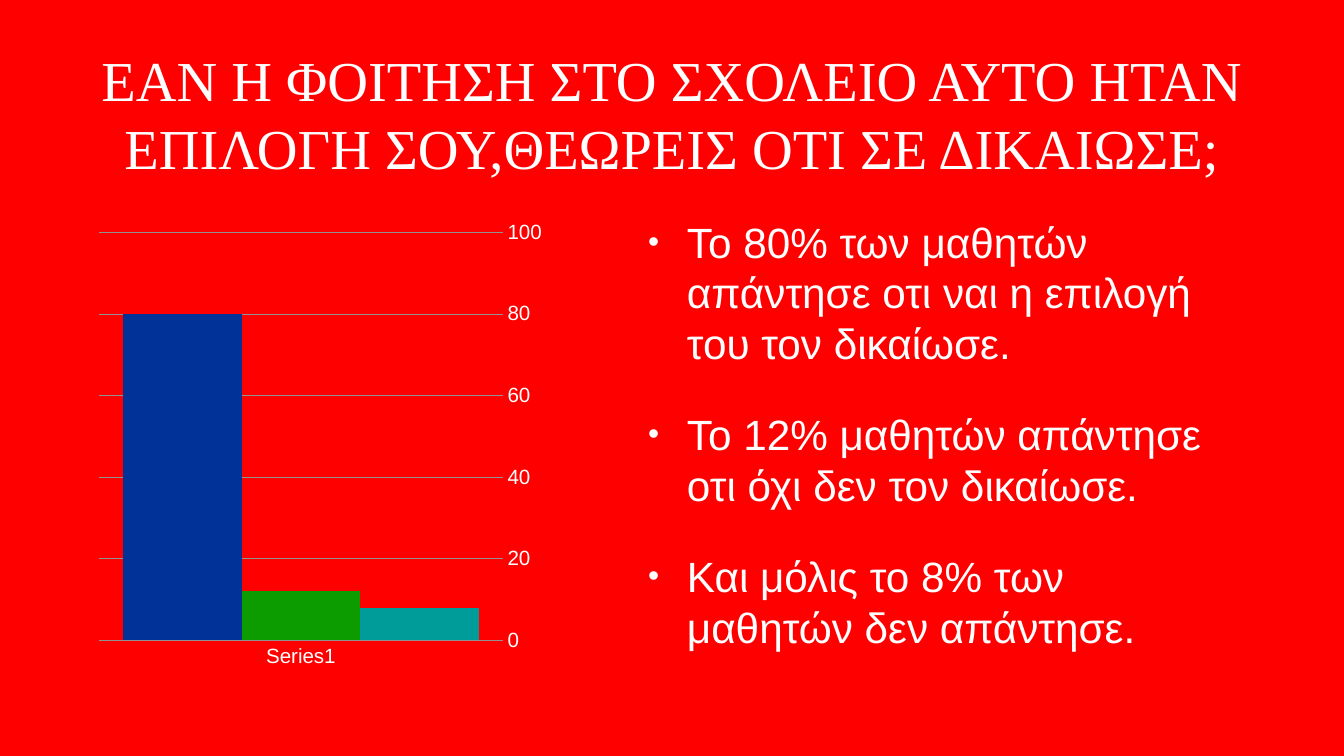
from lxml.etree import SubElement
from pptx import Presentation
from pptx.chart.data import CategoryChartData
from pptx.dml.color import RGBColor
from pptx.enum.chart import XL_CHART_TYPE, XL_TICK_LABEL_POSITION, XL_TICK_MARK
from pptx.enum.text import MSO_ANCHOR, MSO_AUTO_SIZE, PP_ALIGN
from pptx.oxml import parse_xml
from pptx.oxml.ns import nsdecls, qn
from pptx.util import Emu, Pt

PX = 914400 / 50.4
THEME = {
    "background": RGBColor.from_string("FF0000"),
    "text": RGBColor.from_string("FFFFFF"),
    "grid": RGBColor.from_string("929292"),
    "title": {"name": "Times New Roman", "size": Pt(80.6)},
    "body": {"name": "Arial", "size": Pt(60.4)},
    "axis": {"name": "Arial", "size": Pt(29.4)},
}
QUESTION = "ΕΑΝ Η ΦΟΙΤΗΣΗ ΣΤΟ ΣΧΟΛΕΙΟ ΑΥΤΟ ΗΤΑΝ ΕΠΙΛΟΓΗ ΣΟΥ,ΘΕΩΡΕΙΣ ΟΤΙ ΣΕ ΔΙΚΑΙΩΣΕ;"
FINDINGS = [
    "Το 80% των μαθητών απάντησε οτι ναι η επιλογή του τον δικαίωσε.",
    "Το 12% μαθητών απάντησε οτι όχι δεν τον δικαίωσε.",
    "Και μόλις το 8% των μαθητών δεν απάντησε.",
]
ANSWERS = [("Series 1", 80, "003298"), ("Series 2", 12, "0C9C00"), ("Series 3", 8, "009C99")]


def px(*lengths):
    return [Emu(round(length * PX)) for length in lengths]


def set_attributes(target, values):
    for name, value in values.items():
        setattr(target, name, value)


presentation = Presentation()
presentation.slide_width, presentation.slide_height = px(1344, 756)
slide = presentation.slides.add_slide(presentation.slide_layouts[1])
slide.background.fill.solid()
slide.background.fill.fore_color.rgb = THEME["background"]

# Question and findings in the template's placeholders
question, findings = slide.shapes.title, slide.placeholders[1]
question.text_frame.text = QUESTION
findings.text_frame.text = "\n".join(FINDINGS)
inset, indent = px(3, 39)
for holder, box, style in [
    (question, (96, 31, 1152, 164), "title"),
    (findings, (645, 190, 563, 488), "body"),
]:
    set_attributes(holder, dict(zip(("left", "top", "width", "height"), px(*box))))
    margins = dict.fromkeys(("margin_left", "margin_top", "margin_right", "margin_bottom"), inset)
    set_attributes(holder.text_frame, {
        **margins, "word_wrap": True, "auto_size": MSO_AUTO_SIZE.NONE,
        "vertical_anchor": MSO_ANCHOR.MIDDLE,
    })
    for paragraph in holder.text_frame.paragraphs:
        set_attributes(paragraph.runs[0].font, THEME[style])
        paragraph.runs[0].font.color.rgb = THEME["text"]
question.text_frame.paragraphs[0].alignment = PP_ALIGN.CENTER

# Bullets, with a gap between findings
for order, finding in enumerate(findings.text_frame.paragraphs):
    set_attributes(finding, {"alignment": PP_ALIGN.LEFT, "space_before": Pt(58 if order else 0)})
    properties = finding._p.get_or_add_pPr()
    properties.set("marL", str(indent))
    properties.set("indent", str(-indent))
    SubElement(properties, qn("a:buSzPct"), val="75000")
    SubElement(properties, qn("a:buFont"), typeface="Arial")
    SubElement(properties, qn("a:buChar"), char="•")

# Column chart of the answers
answers = CategoryChartData()
answers.categories = ["Series1"]
for name, share, _ in ANSWERS:
    answers.add_series(name, [share])
chart = slide.shapes.add_chart(
    XL_CHART_TYPE.COLUMN_CLUSTERED, *px(97, 221, 447, 447), answers).chart
set_attributes(chart, {"has_legend": False, "has_title": False})
set_attributes(chart.font, THEME["axis"])
chart.font.color.rgb = THEME["text"]

columns = chart.plots[0]
set_attributes(columns, {"gap_width": 40, "overlap": 0, "vary_by_categories": False})
for series, (_, _, color) in zip(columns.series, ANSWERS):
    series.format.fill.solid()
    series.format.fill.fore_color.rgb = RGBColor.from_string(color)
    series.format.line.fill.background()

# Axes: shares on the right, grey gridlines
for axis, label_side in [
    (chart.category_axis, XL_TICK_LABEL_POSITION.LOW),
    (chart.value_axis, XL_TICK_LABEL_POSITION.HIGH),
]:
    set_attributes(axis, {
        "major_tick_mark": XL_TICK_MARK.NONE, "minor_tick_mark": XL_TICK_MARK.NONE,
        "tick_label_position": label_side,
    })
    axis.format.line.fill.background()
    set_attributes(axis.tick_labels.font, THEME["axis"])
    axis.tick_labels.font.color.rgb = THEME["text"]
set_attributes(chart.value_axis, {
    "minimum_scale": 0, "maximum_scale": 100, "major_unit": 20, "has_major_gridlines": True,
})
gridlines = chart.value_axis.major_gridlines.format.line
gridlines.color.rgb = THEME["grid"]
gridlines.width = Pt(1)

# Plot fills the frame, labels included
plot_area = chart._chartSpace.chart.plotArea
for old_layout in plot_area.findall(qn("c:layout")):
    plot_area.remove(old_layout)
plot_area.insert(0, parse_xml(
    f'<c:layout {nsdecls("c")}><c:manualLayout><c:layoutTarget val="outer"/>'
    '<c:xMode val="edge"/><c:yMode val="edge"/><c:x val="0.005"/><c:y val="0"/>'
    '<c:w val="0.99"/><c:h val="1"/></c:manualLayout></c:layout>'))

presentation.save("out.pptx")
